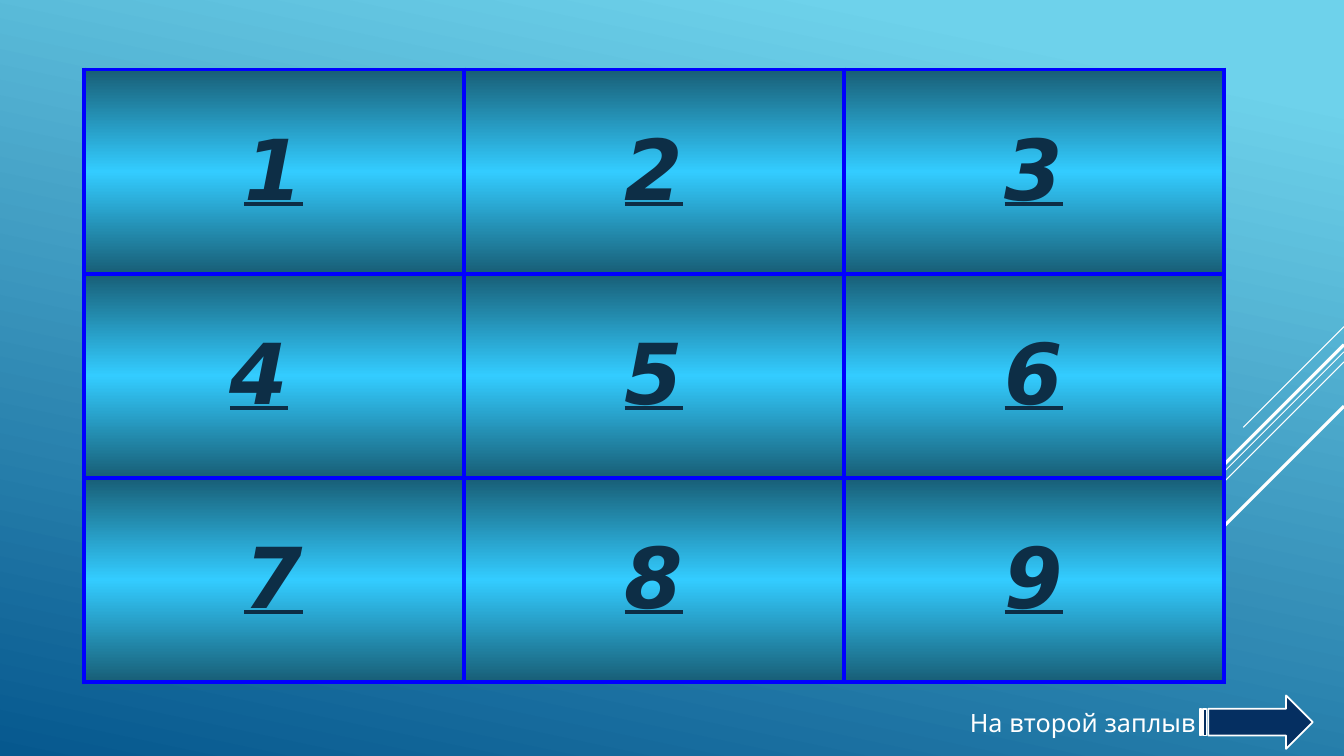
from lxml import etree
from pptx import Presentation
from pptx.dml.color import RGBColor
from pptx.enum.shapes import MSO_CONNECTOR, MSO_SHAPE
from pptx.enum.text import MSO_ANCHOR, MSO_AUTO_SIZE, PP_ALIGN
from pptx.oxml.ns import qn
from pptx.util import Inches, Pt

STRAIGHT = MSO_CONNECTOR.STRAIGHT
STRIPED_ARROW = MSO_SHAPE.STRIPED_RIGHT_ARROW
MIDDLE = MSO_ANCHOR.MIDDLE
CENTER = PP_ALIGN.CENTER
GROW = MSO_AUTO_SIZE.SHAPE_TO_FIT_TEXT

WIDTH, HEIGHT = 13.33, 7.5
QUESTIONS = [["1", "2", "3"], ["4 ", "5", "6"], ["7", "8", "9"]]
NEXT_ROUND = "На второй заплыв"

BOARD_LEFT, BOARD_TOP, COLUMN, ROW = 0.83, 0.69, 3.77, 2.025
BORDER, BORDER_POINTS = "0000FF", 3
CELL_STOPS = [(0, "185E76"), (50, "33CCFF"), (100, "185E76")]
BACKGROUND_STOPS = [(10, "6ED2EB"), (100, "06588E")]
WHITE, NAVY, DIGIT = "FFFFFF", "052F61", "0D2E46"

# Diagonals at 45 degrees: height at the right edge, horizontal run, points
DIAGONALS = [
    (3.24, 1.0, 0.75),
    (3.49, 3.26, 0.75),
    (3.59, 2.07, 0.75),
    (3.42, 1.91, 2.25),
    (4.03, 1.39, 2.25),
]


def color(value):
    return RGBColor.from_string(value)


def paint_gradient(fill, owner, stops, clockwise_angle):
    """Fill with any number of (percent, colour) stops; owner is the XML holding the fill."""
    fill.gradient()
    fill.gradient_angle = (360 - clockwise_angle) % 360
    stop_list = owner.find(".//" + qn("a:gsLst"))
    for stop in list(stop_list):
        stop_list.remove(stop)
    for percent, value in stops:
        stop = etree.SubElement(stop_list, qn("a:gs"), pos=str(percent * 1000))
        etree.SubElement(stop, qn("a:srgbClr"), val=value)


def add_borders(properties):
    for index, side in enumerate(("a:lnL", "a:lnR", "a:lnT", "a:lnB")):
        line = etree.Element(qn(side), w=str(Pt(BORDER_POINTS)))
        solid = etree.SubElement(line, qn("a:solidFill"))
        etree.SubElement(solid, qn("a:srgbClr"), val=BORDER)
        properties.insert(index, line)


def add_diagonals(slide):
    for top, run, points in DIAGONALS:
        line = slide.shapes.add_connector(
            STRAIGHT, Inches(WIDTH), Inches(top), Inches(WIDTH - run), Inches(top + run))
        line.line.color.rgb = color(WHITE)
        line.line.width = Pt(points)
        etree.SubElement(line.element.spPr, qn("a:effectLst"))


def fill_cell(cell, label):
    properties = cell._tc.get_or_add_tcPr()
    paint_gradient(cell.fill, properties, CELL_STOPS, 90)
    add_borders(properties)
    cell.vertical_anchor = MIDDLE
    paragraph = cell.text_frame.paragraphs[0]
    paragraph.alignment = CENTER
    spacing = etree.SubElement(paragraph._p.get_or_add_pPr(), qn("a:spcBef"))
    etree.SubElement(spacing, qn("a:spcPct"), val="20000")
    for character in label:
        run = paragraph.add_run()
        run.text = character
        font = run.font
        font.name, font.size = "DejaVu Sans", Pt(60)
        font.bold = font.italic = True
        font.underline = character != " "
        font.color.rgb = color(DIGIT)


def add_board(slide):
    rows, columns = len(QUESTIONS), len(QUESTIONS[0])
    table = slide.shapes.add_table(
        rows, columns, Inches(BOARD_LEFT), Inches(BOARD_TOP),
        Inches(columns * COLUMN), Inches(rows * ROW)).table
    for column in table.columns:
        column.width = Inches(COLUMN)
    for row, labels in zip(table.rows, QUESTIONS):
        row.height = Inches(ROW)
        for cell, label in zip(row.cells, labels):
            fill_cell(cell, label)


def add_next_round(slide):
    box = slide.shapes.add_textbox(Inches(9.52), Inches(6.97), Inches(2.94), Inches(0.4))
    frame = box.text_frame
    frame.word_wrap = True
    frame.auto_size = GROW
    run = frame.paragraphs[0].add_run()
    run.text = NEXT_ROUND
    run.font.name, run.font.size = "Quicksand", Pt(18)
    run.font.color.rgb = color(WHITE)

    arrow = slide.shapes.add_shape(
        STRIPED_ARROW, Inches(11.9), Inches(6.9), Inches(1.12), Inches(0.53))
    arrow.shadow.inherit = False
    arrow.fill.solid()
    arrow.fill.fore_color.rgb = color(NAVY)
    arrow.line.color.rgb = color(WHITE)
    arrow.line.width = Pt(1.25)


def main():
    presentation = Presentation()
    presentation.slide_width = Inches(WIDTH)
    presentation.slide_height = Inches(HEIGHT)
    slide = presentation.slides.add_slide(presentation.slide_layouts[6])
    paint_gradient(slide.background.fill, slide.element, BACKGROUND_STOPS, 102)
    add_diagonals(slide)
    add_board(slide)
    add_next_round(slide)
    presentation.save("out.pptx")


if __name__ == "__main__":
    main()
